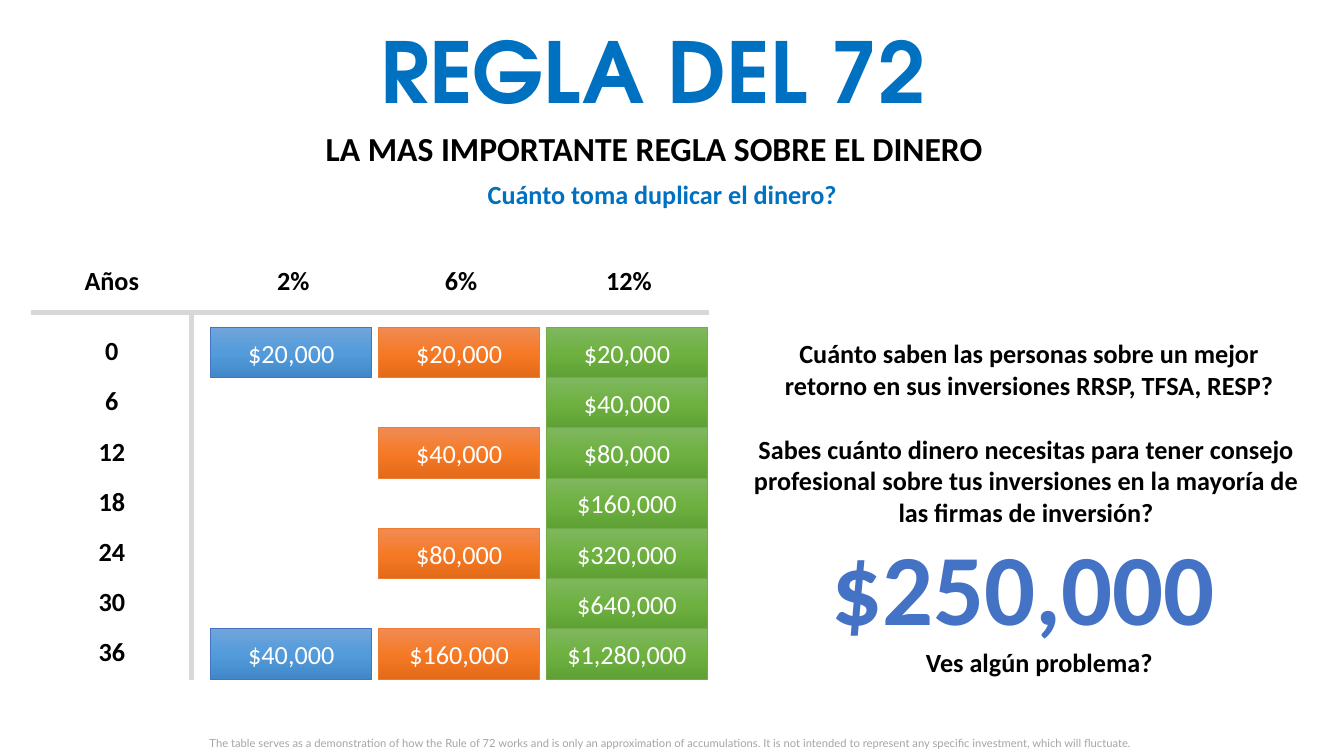
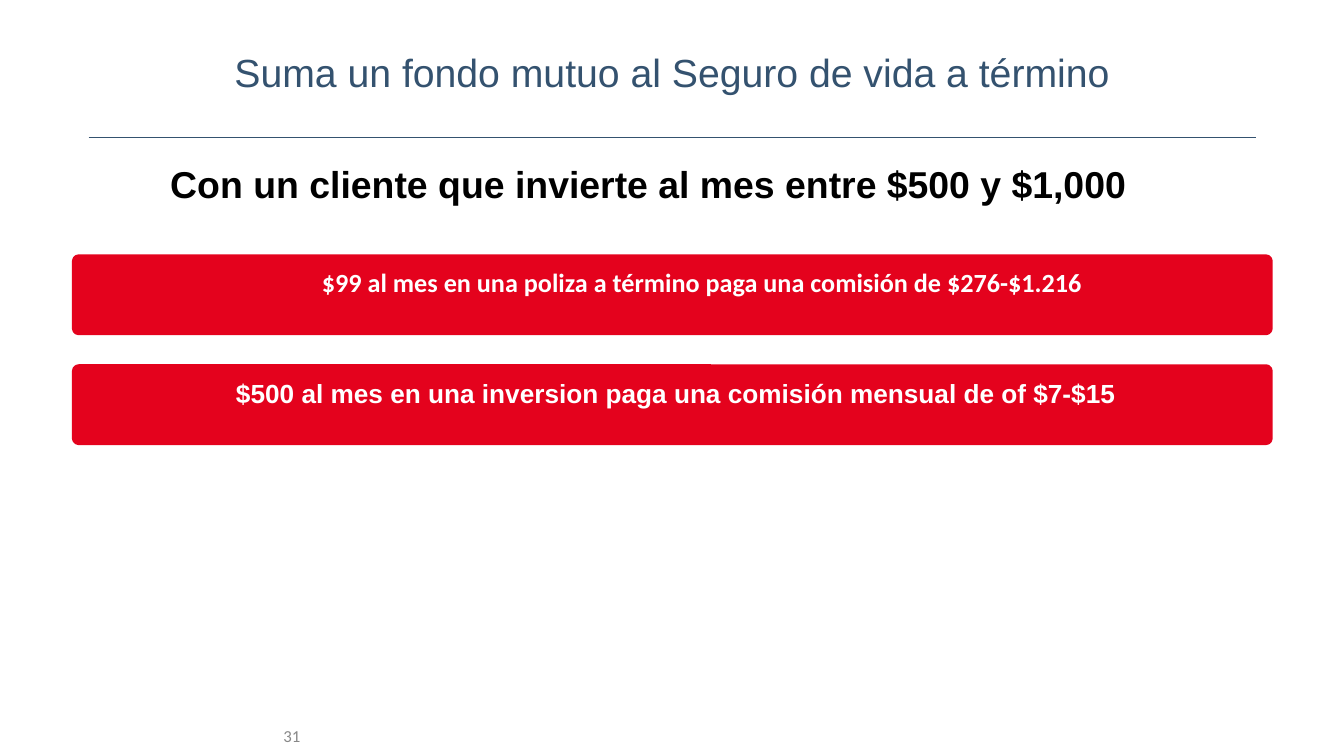
from copy import deepcopy
from pptx import Presentation
from pptx import util as u
from pptx.dml.color import RGBColor
from pptx.enum import shapes, text
from pptx.oxml.ns import qn
from lxml import etree

HUES = {
    "black": "000000", "white": "FFFFFF", "blue": "0070C0", "royal": "4472C4",
    "slate": "34526F", "red": "E4021D", "rule": "D8D8D8", "note": "A5A5A5",
    "page": "888888", "orange": "ED7D31", "green": "70AD47",
}
FADES = {
    "royal": ("70A5DA", "539BDB", "4288C8"),
    "orange": ("F08B54", "F67A26", "E36A18"),
    "green": ("7FB75F", "6EB141", "5FA134"),
}
SIDES = {"l": text.PP_ALIGN.LEFT, "c": text.PP_ALIGN.CENTER, "r": text.PP_ALIGN.RIGHT}
SPOTS = {"t": text.MSO_ANCHOR.TOP, "m": text.MSO_ANCHOR.MIDDLE}
UNIT = 0.1


def size(n):
    return u.Inches(n * UNIT)


def ink(name):
    return RGBColor.from_string(HUES.get(name, name))


def write(shape, words, pt=18.7, hue="black", face="Calibri", bold=True,
          side="c", spot="t", pad=(1, 0.5), lead=None):
    frame = shape.text_frame
    frame.word_wrap = True
    frame.auto_size = text.MSO_AUTO_SIZE.NONE
    frame.vertical_anchor = SPOTS[spot]
    frame.margin_left = frame.margin_right = size(pad[0])
    frame.margin_top = frame.margin_bottom = size(pad[1])
    frame.text = words
    para = frame.paragraphs[0]
    para.alignment = SIDES[side]
    if lead:
        para.line_spacing = lead
    font = para.runs[0].font
    font.name, font.size, font.bold = face, u.Pt(pt), bold
    font.color.rgb = ink(hue)


class Deck:
    wide = (1.3, 0.7)

    def __init__(self):
        self.show = Presentation()
        self.show.slide_width = size(133.33)
        self.show.slide_height = size(75)

    def page(self, words, *spot, **form):
        self.slide = self.show.slides.add_slide(self.show.slide_layouts[5])
        head = self.slide.shapes.title
        head.left, head.top, head.width, head.height = map(size, spot)
        write(head, words, **form)

    def label(self, words, *spot, **form):
        write(self.slide.shapes.add_textbox(*map(size, spot)), words, **form)

    def block(self, kind, hue, line, *spot):
        shape = self.slide.shapes.add_shape(kind, *map(size, spot))
        shape.shadow.inherit = False
        shape.line.color.rgb = ink(hue)
        shape.line.width = u.Pt(line)
        return shape

    def cell(self, words, hue, *spot):
        shape = self.block(shapes.MSO_SHAPE.RECTANGLE, hue, 0.75, *spot)
        fill = shape.fill
        fill.gradient()
        fill.gradient_angle = 270
        stops = shape._element.spPr.find(qn("a:gradFill")).find(qn("a:gsLst"))
        stops.append(deepcopy(stops[-1]))
        for n, (stop, tone) in enumerate(zip(fill.gradient_stops, FADES[hue])):
            stop.position = n / 2
            stop.color.rgb = ink(tone)
        write(shape, words, hue="white", bold=False, spot="m", pad=(1, 1))

    def band(self, *spot):
        shape = self.block(shapes.MSO_SHAPE.ROUNDED_RECTANGLE, "red", 3, *spot)
        shape.adjustments[0] = 0.06
        shape.fill.solid()
        shape.fill.fore_color.rgb = ink("red")

    def rule(self, hue, line, *ends):
        wire = self.slide.shapes.add_connector(
            shapes.MSO_CONNECTOR.STRAIGHT, *map(size, ends))
        wire.line.color.rgb = ink(hue)
        wire.line.width = u.Pt(line)
        etree.SubElement(wire._element.spPr, qn("a:effectLst"))


def growth(deck):
    deck.page("REGLA DEL 72", 10.9, 2, 107.7, 11.1, pt=60, hue="blue",
              face="TeX Gyre Adventor", spot="m", lead=0.9)
    deck.label("LA MAS IMPORTANTE REGLA SOBRE EL DINERO", 26, 12.2, 77.8, 5, pt=24)
    deck.label("Cuánto toma duplicar el dinero?", 40.8, 17.2, 49.8, 4, hue="blue")

    left, top, wide, high = 20.9, 32.5, 16, 5
    col, row, rows = 16.65, 4.98, 7
    deck.label("Años", 3.1, 25.7, wide, 4)
    for n in range(rows):
        deck.label(str(6 * n), 3.1, top + 0.2 + n * row, wide, 4)
    deck.rule("rule", 3, 3.1, 31, 70.3, 31)
    deck.rule("rule", 3, 19, 31, 19, 67.5)
    rates = (("2%", 6, "royal"), ("6%", 2, "orange"), ("12%", 1, "green"))
    for n, (rate, step, hue) in enumerate(rates):
        x = left + n * col
        deck.label(rate, x + 0.2, 25.7, wide, 4)
        for turn, at in enumerate(range(0, rows, step)):
            deck.cell(f"${20000 * 2 ** turn:,}", hue, x, top + at * row, wide, high)

    deck.label("Cuánto saben las personas sobre un mejor retorno en sus "
               "inversiones RRSP, TFSA, RESP?", 74.1, 33, 56, 7.1)
    deck.label("Sabes cuánto dinero necesitas para tener consejo profesional sobre "
               "tus inversiones en la mayoría de las firmas de inversión?",
               73.8, 42.5, 56, 10.1)
    deck.label("$250,000", 81.5, 51.6, 40.4, 13.1, pt=72, hue="royal", side="l")
    deck.label("Ves algún problema?", 84, 63.6, 38.2, 4)
    deck.label("The table serves as a demonstration of how the Rule of 72 works and is "
               "only an approximation of accumulations. It is not intended to represent "
               "any specific investment, which will fluctuate.",
               19.8, 72.6, 97.4, 2.4, pt=8, hue="note", face="Lato",
               bold=False, side="l")


def fees(deck):
    wide = deck.wide
    deck.page("Suma un fondo mutuo al Seguro de vida a término", 4.4, 4.8, 124.5, 7.4,
              pt=28, hue="slate", face="Arial", bold=False, pad=wide, lead=0.85)
    deck.rule("slate", 0.75, 8.8, 13.6, 124.6, 13.6)
    deck.label("Con un cliente que invierte al mes entre $500 y $1,000",
               5.6, 16, 117.6, 6.2, pt=26.7, face="Arial", pad=wide, lead=0.85)
    bands = (
        ("$99 al mes en una poliza a término paga una comisión de $276-$1.216",
         10.3, 0.65, "Calibri", 0.9),
        ("$500 al mes en una inversion paga una comisión mensual de of $7-$15",
         7.7, 0.35, "Arial", None),
    )
    for n, (words, x, drop, face, lead) in enumerate(bands):
        y = 25.45 + n * 10.9
        deck.band(7.35, y, 118.7, 7.6)
        deck.label(words, x, y + drop, 118.7, 5.5, hue="white", face=face,
                   pad=wide, lead=lead)
    deck.label("31", 0, 71, 31.1, 4, pt=12, hue="page", bold=False,
               side="r", spot="m", pad=wide)


def main():
    deck = Deck()
    growth(deck)
    fees(deck)
    deck.show.save("out.pptx")


if __name__ == "__main__":
    main()
